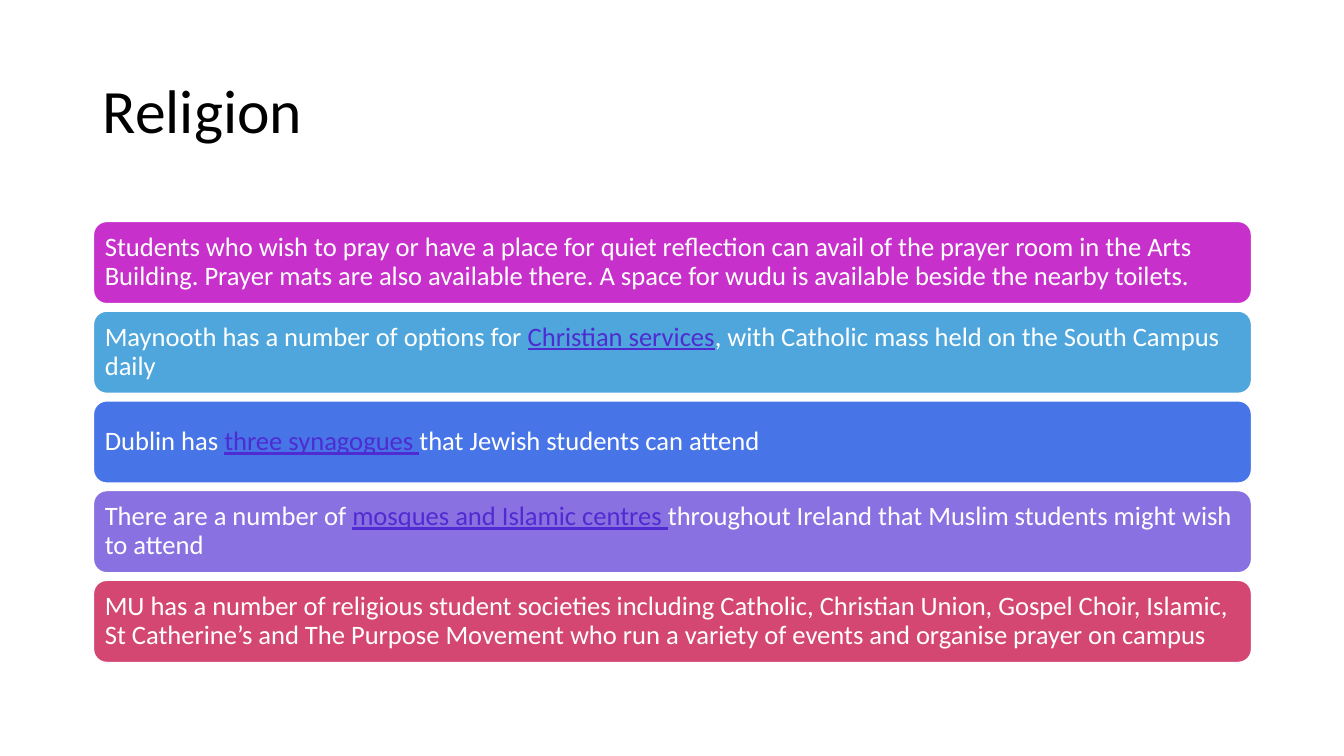
import pptx
import pptx.dml.color
import pptx.enum.shapes
import pptx.enum.text
import pptx.util

Inches, Pt = pptx.util.Inches, pptx.util.Pt
PP_ALIGN, MSO_ANCHOR = pptx.enum.text.PP_ALIGN, pptx.enum.text.MSO_ANCHOR

# Content: bar colour, then runs as (text, underlined)
TITLE = "Religion"
BARS = [
    ("C830CC", [("Students who wish to pray or have a place for quiet reflection can avail of "
                 "the prayer room in the Arts Building. Prayer mats are also available there. "
                 "A space for wudu is available beside the nearby toilets.", False)]),
    ("4EA6DC", [("Maynooth has a number of options for ", False),
                ("Christian services", True),
                (", with Catholic mass held on the South Campus daily", False)]),
    ("4775E7", [("Dublin has ", False),
                ("three synagogues ", True),
                ("that Jewish students can attend", False)]),
    ("8971E1", [("There are a number of ", False),
                ("mosques and Islamic centres ", True),
                ("throughout Ireland that Muslim students might wish to attend", False)]),
    ("D54773", [("MU has a number of religious student societies including Catholic, "
                 "Christian Union, Gospel Choir, Islamic, St Catherine’s and The Purpose "
                 "Movement who run a variety of events and organise prayer on campus", False)]),
]

# Layout in inches
LEFT, WIDTH = 0.92, 11.5
BAR_TOP, BAR_HEIGHT, BAR_GAP = 2.19, 0.83, 0.06
INSET = 0.08


def color(value):
    return pptx.dml.color.RGBColor.from_string(value)


def add_run(p, text, size, fill, underline=False):
    r = p.add_run()
    r.text = text
    r.font.name = "Calibri"
    r.font.size = Pt(size)
    r.font.color.rgb = color(fill)
    r.font.underline = underline


def format_text(tf, p):
    tf.word_wrap = True
    tf.vertical_anchor = MSO_ANCHOR.MIDDLE
    p.alignment = PP_ALIGN.LEFT
    p.line_spacing = 0.9


def add_bar(slide, top, fill, runs):
    s = slide.shapes.add_shape(
        pptx.enum.shapes.MSO_SHAPE.ROUNDED_RECTANGLE,
        Inches(LEFT), Inches(top), Inches(WIDTH), Inches(BAR_HEIGHT))
    s.shadow.inherit = False
    s.fill.solid()
    s.fill.fore_color.rgb = color(fill)
    s.line.color.rgb = color("FFFFFF")
    s.line.width = Pt(2)
    tf = s.text_frame
    tf.margin_left = tf.margin_right = Inches(INSET)
    tf.margin_top = tf.margin_bottom = Inches(INSET)
    p = tf.paragraphs[0]
    format_text(tf, p)
    for text, underlined in runs:
        add_run(p, text, 19, "4F2CD1" if underlined else "FFFFFF", underlined)


def main():
    prs = pptx.Presentation()
    prs.slide_width, prs.slide_height = Inches(13.33), Inches(7.5)
    slide = prs.slides.add_slide(prs.slide_layouts[5])

    # Title
    title = slide.shapes.title
    title.left, title.top = Inches(LEFT), Inches(0.4)
    title.width, title.height = Inches(WIDTH), Inches(1.45)
    p = title.text_frame.paragraphs[0]
    format_text(title.text_frame, p)
    add_run(p, TITLE, 44, "000000")

    # Stacked bars
    for i, (fill, runs) in enumerate(BARS):
        add_bar(slide, BAR_TOP + i * (BAR_HEIGHT + BAR_GAP), fill, runs)

    prs.save("out.pptx")


if __name__ == "__main__":
    main()
